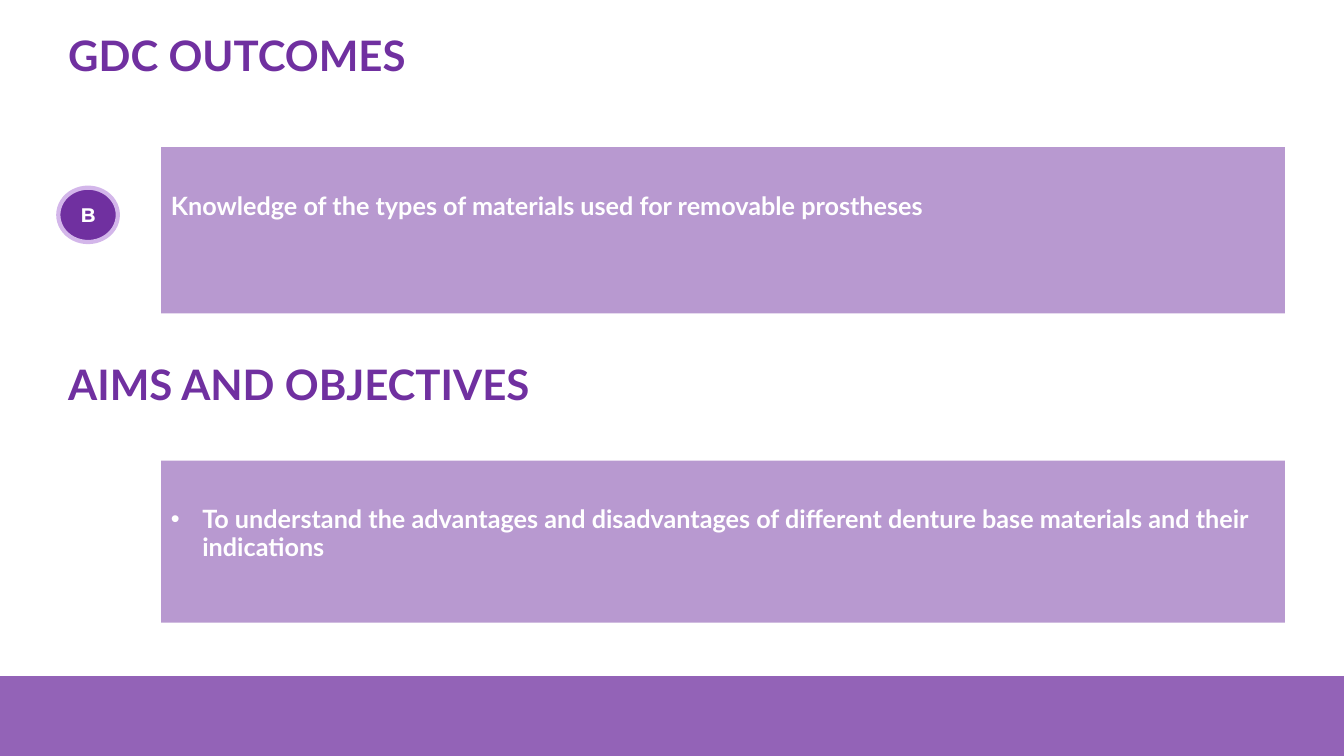
from dataclasses import dataclass

from lxml import etree
from pptx import Presentation
from pptx import util as u
from pptx.dml.color import RGBColor
from pptx.enum import shapes, text
from pptx.oxml.ns import qn


@dataclass(frozen=True)
class Theme:
    purple: str = "7030A0"
    lilac: str = "D3B6EA"
    white: str = "FFFFFF"
    body_font: str = "Lato"
    badge_font: str = "Montserrat"
    heading_size: int = 30
    body_size: int = 18
    badge_size: int = 14


THEME = Theme()
SLIDE_WIDTH, SLIDE_HEIGHT = u.Cm(33.87), u.Cm(19.05)


def write_text(shape, content, *, size, color, font=THEME.body_font, line_spacing=0.9,
               align=text.PP_ALIGN.LEFT, anchor=text.MSO_ANCHOR.MIDDLE,
               top_inset=u.Cm(0.13), bullet=False):
    frame = shape.text_frame
    frame.word_wrap = True
    frame.vertical_anchor = anchor
    frame.margin_left = frame.margin_right = u.Cm(0.25)
    frame.margin_top, frame.margin_bottom = top_inset, u.Cm(0.13)
    paragraph = frame.paragraphs[0]
    paragraph.alignment = align
    paragraph.line_spacing = line_spacing
    run = paragraph.add_run()
    run.text = content
    run.font.name, run.font.size, run.font.bold = font, u.Pt(size), True
    run.font.color.rgb = RGBColor.from_string(color)
    if bullet:
        properties = paragraph._p.get_or_add_pPr()
        indent = u.Cm(0.79)
        properties.set("marL", str(indent))
        properties.set("indent", str(-indent))
        bullet_color = etree.SubElement(properties, qn("a:buClr"))
        etree.SubElement(bullet_color, qn("a:srgbClr"), val=color)
        etree.SubElement(properties, qn("a:buFont"), typeface="Arial")
        etree.SubElement(properties, qn("a:buChar"), char="•")


def add_filled_shape(slide, kind, box, opacity=100):
    shape = slide.shapes.add_shape(kind, *box)
    shape.shadow.inherit = False
    shape.fill.solid()
    shape.fill.fore_color.rgb = RGBColor.from_string(THEME.purple)
    shape.line.fill.background()
    if opacity < 100:
        color = shape.fill._xPr.find(qn("a:solidFill"))[0]
        etree.SubElement(color, qn("a:alpha"), val=str(opacity * 1000))
    return shape


def add_footer(slide, height):
    box = (0, SLIDE_HEIGHT - height, SLIDE_WIDTH, height)
    add_filled_shape(slide, shapes.MSO_SHAPE.RECTANGLE, box, opacity=75)


def add_badge(slide, box, letter):
    badge = add_filled_shape(slide, shapes.MSO_SHAPE.OVAL, box)
    badge.line.color.rgb = RGBColor.from_string(THEME.lilac)
    badge.line.width = u.Pt(3)
    write_text(badge, letter, size=THEME.badge_size, color=THEME.white,
               font=THEME.badge_font, line_spacing=1.0, align=text.PP_ALIGN.CENTER)


def add_section(slide, box, heading, statement, panel_offset, bullet=False, badge=None):
    """Place a heading, with a tinted panel below it that reaches the box's far corner."""
    left, top, width, height = box

    # Heading
    title = slide.shapes.add_textbox(left, top, u.Cm(23.52), u.Cm(2.08))
    write_text(title, heading, size=THEME.heading_size, color=THEME.purple)

    # Panel
    panel_indent = u.Cm(2.59)
    panel_box = (left + panel_indent, top + panel_offset,
                 width - panel_indent, height - panel_offset)
    panel = add_filled_shape(slide, shapes.MSO_SHAPE.RECTANGLE, panel_box, opacity=49)
    write_text(panel, statement, size=THEME.body_size, color=THEME.white,
               anchor=text.MSO_ANCHOR.TOP, top_inset=u.Cm(1.17), bullet=bullet)

    # Outcome letter beside the panel
    if badge:
        badge_box = (left, top + panel_offset + u.Cm(1.02), u.Cm(1.5), u.Cm(1.37))
        add_badge(slide, badge_box, badge)


def main():
    presentation = Presentation()
    presentation.slide_width, presentation.slide_height = SLIDE_WIDTH, SLIDE_HEIGHT
    slide = presentation.slides.add_slide(presentation.slide_layouts[6])

    add_footer(slide, u.Cm(2.01))
    left, width = u.Cm(1.47), u.Cm(30.91)
    add_section(slide, (left, u.Cm(0.43), width, u.Cm(7.47)), "GDC OUTCOMES",
                "Knowledge of the types of materials used for removable prostheses",
                panel_offset=u.Cm(3.28), badge="B")
    add_section(slide, (left, u.Cm(8.71), width, u.Cm(6.98)), "AIMS AND OBJECTIVES",
                "To understand the advantages and disadvantages of different "
                "denture base materials and their indications",
                panel_offset=u.Cm(2.9), bullet=True)

    presentation.save("out.pptx")


if __name__ == "__main__":
    main()
